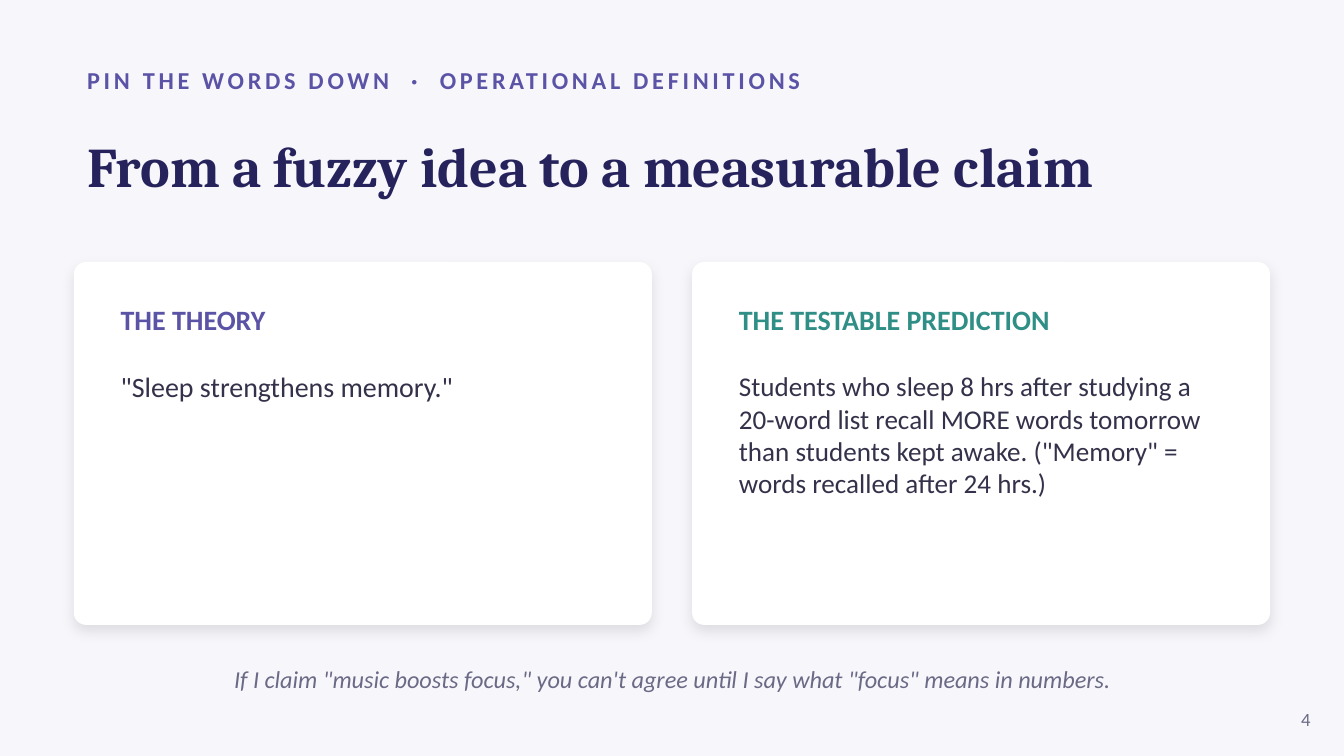
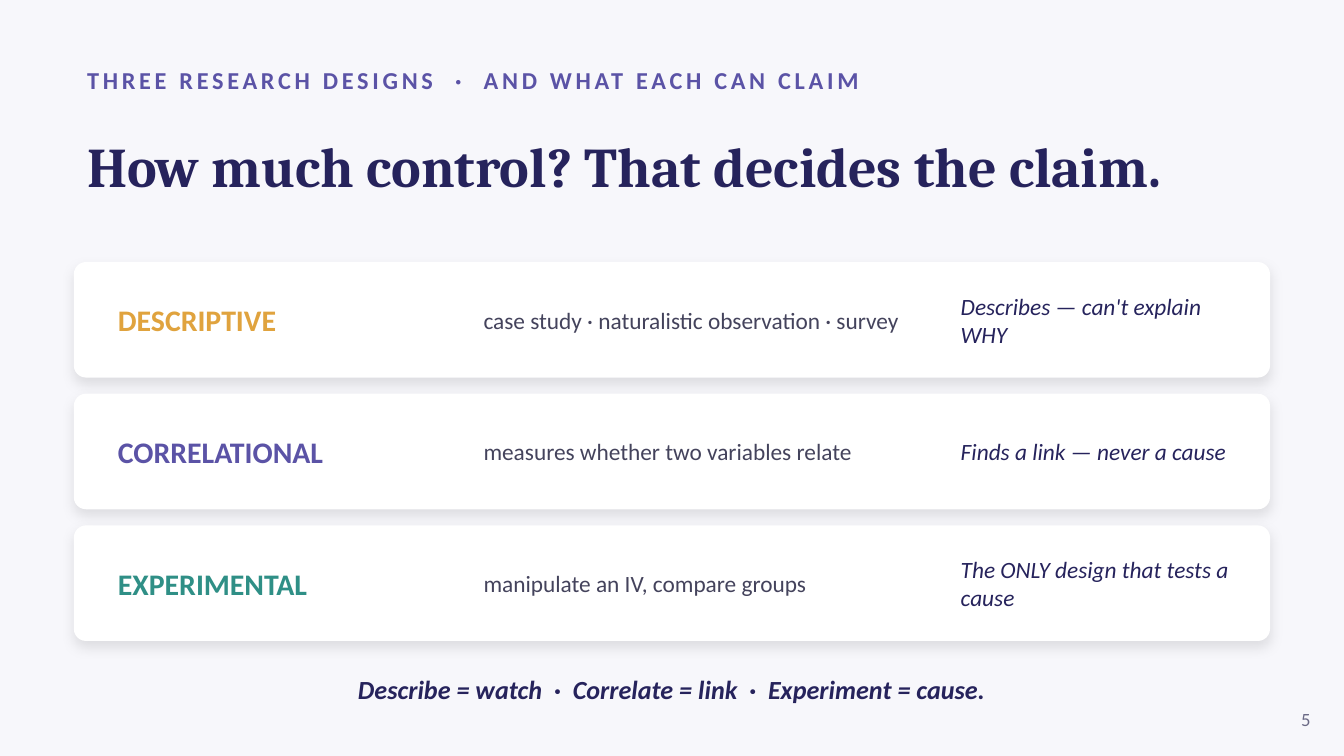
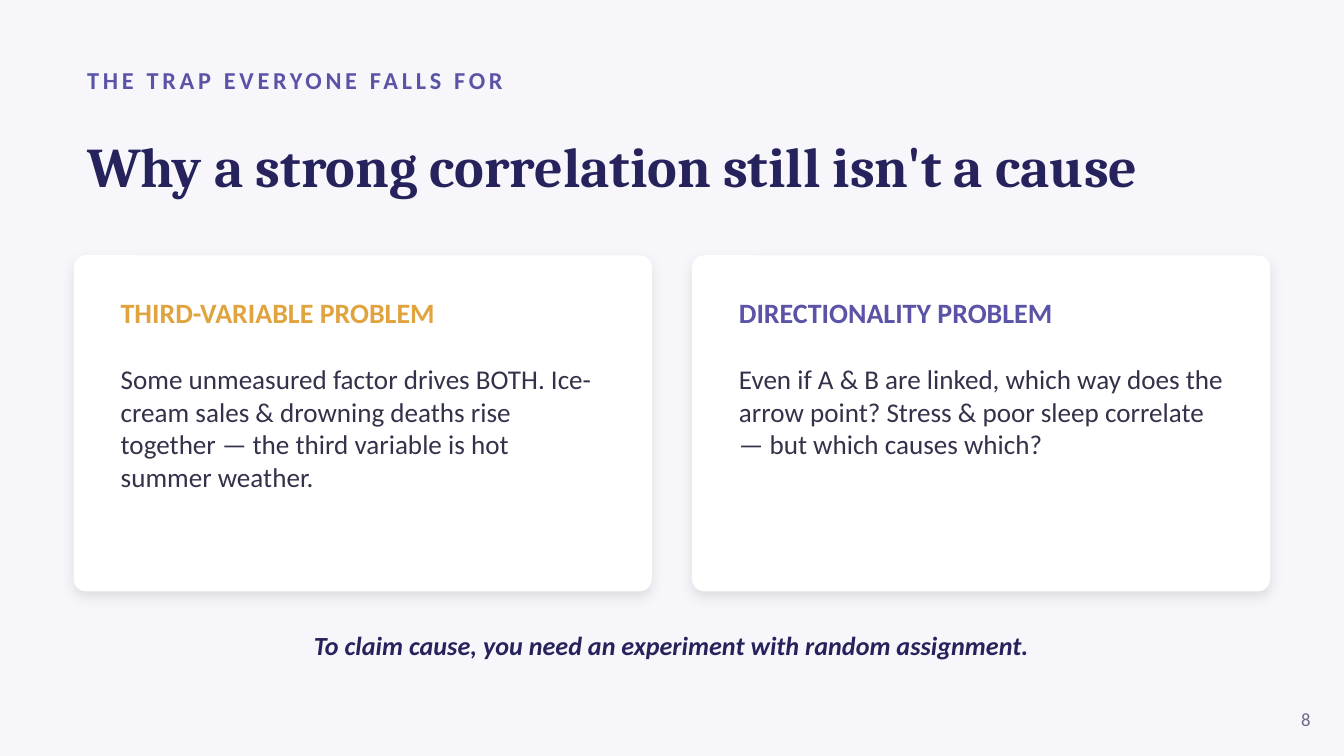
from lxml.etree import SubElement
from pptx import Presentation
from pptx.dml.color import RGBColor
from pptx.enum.shapes import MSO_SHAPE as Shape
from pptx.enum.text import MSO_ANCHOR as Anchor, PP_ALIGN as Align
from pptx.oxml.ns import qn
from pptx.util import Inches, Pt

# Content
PURPLE, TEAL, AMBER = "5B53A6", "2F8F86", "E0A33E"
NAVY, INK, SLATE, GREY = "26235C", "33324A", "44435C", "6B6A86"
PAPER, WHITE, BLACK = "F7F7FB", "FFFFFF", "000000"

DEFINITIONS = {
    "number": 4,
    "kicker": "PIN THE WORDS DOWN  ·  OPERATIONAL DEFINITIONS",
    "title": "From a fuzzy idea to a measurable claim",
    "top": 1.95,
    "height": 2.7,
    "cards": [
        ("THE THEORY", PURPLE, "\"Sleep strengthens memory.\"", 15),
        ("THE TESTABLE PREDICTION", TEAL,
         "Students who sleep 8 hrs after studying a 20-word list recall MORE "
         "words tomorrow than students kept awake. (\"Memory\" = words recalled "
         "after 24 hrs.)", 14.5),
    ],
    "takeaway": "If I claim \"music boosts focus,\" you can't agree until I say "
                "what \"focus\" means in numbers.",
    "takeaway_format": {"size": 13, "color": GREY, "italic": True},
}
DESIGNS = {
    "number": 5,
    "kicker": "THREE RESEARCH DESIGNS  ·  AND WHAT EACH CAN CLAIM",
    "title": "How much control? That decides the claim.",
    "rows": [
        ("DESCRIPTIVE", AMBER, "case study · naturalistic observation · survey",
         "Describes — can't explain WHY"),
        ("CORRELATIONAL", PURPLE, "measures whether two variables relate",
         "Finds a link — never a cause"),
        ("EXPERIMENTAL", TEAL, "manipulate an IV, compare groups",
         "The ONLY design that tests a cause"),
    ],
    "takeaway": "Describe = watch  ·  Correlate = link  ·  Experiment = cause.",
}
TRAP = {
    "number": 8,
    "kicker": "THE TRAP EVERYONE FALLS FOR",
    "title": "Why a strong correlation still isn't a cause",
    "top": 1.9,
    "height": 2.5,
    "cards": [
        ("THIRD-VARIABLE PROBLEM", AMBER,
         "Some unmeasured factor drives BOTH. Ice-cream sales & drowning deaths "
         "rise together — the third variable is hot summer weather.", 14.5),
        ("DIRECTIONALITY PROBLEM", PURPLE,
         "Even if A & B are linked, which way does the arrow point? Stress & poor "
         "sleep correlate — but which causes which?", 14.5),
    ],
    "takeaway": "To claim cause, you need an experiment with random assignment.",
    "takeaway_format": {"size": 14, "color": NAVY, "bold": True, "italic": True},
}

# Shared layout, in inches
PAGE_WIDTH = 10
PAGE_HEIGHT = PAGE_WIDTH * 9 / 16
MARGIN, CONTENT_WIDTH = 0.55, 8.9
CARD_GAP, CARD_PADDING, CORNER = 0.3, 0.25, 0.09
ROW_TOP, ROW_HEIGHT, ROW_GAP = 1.95, 0.86, 0.12


def rgb(value):
    return RGBColor.from_string(value)


def add_span(para, text, size, color, name="Calibri", spacing=0, **styles):
    span = para.add_run()
    span.text = text
    span.font.color.rgb = rgb(color)
    for key, value in {"size": Pt(size), "name": name, **styles}.items():
        setattr(span.font, key, value)
    if spacing:
        span._r.get_or_add_rPr().set("spc", str(spacing * 100))


def add_box(page, place, anchor=Anchor.MIDDLE):
    frame = page.shapes.add_textbox(*map(Inches, place)).text_frame
    frame.word_wrap = True
    frame.vertical_anchor = anchor
    return frame


def add_label(page, place, text, align=Align.LEFT, **look):
    para = add_box(page, place).paragraphs[0]
    para.alignment = align
    add_span(para, text, **look)


def add_panel(page, left, top, width, height):
    panel = page.shapes.add_shape(
        Shape.ROUNDED_RECTANGLE, *map(Inches, (left, top, width, height)))
    panel.adjustments[0] = CORNER / min(width, height)
    panel.fill.solid()
    panel.fill.fore_color.rgb = rgb(WHITE)
    panel.line.fill.background()
    # Soft shadow straight below the panel
    panel.shadow.inherit = False
    effects = panel._element.spPr.find(qn("a:effectLst"))
    shadow = SubElement(effects, qn("a:outerShdw"), blurRad=str(Pt(7)),
                        dist=str(Pt(3)), dir="5400000", algn="bl", rotWithShape="0")
    tint = SubElement(shadow, qn("a:srgbClr"), val=BLACK)
    SubElement(tint, qn("a:alpha"), val="10000")


def add_page(deck, content):
    page = deck.slides.add_slide(deck.slide_layouts[6])
    page.background.fill.solid()
    page.background.fill.fore_color.rgb = rgb(PAPER)
    add_label(page, (MARGIN, 0.42, 9, 0.35), content["kicker"],
              size=13, color=PURPLE, bold=True, spacing=2)
    add_label(page, (MARGIN, 0.78, CONTENT_WIDTH, 0.9), content["title"],
              size=30, color=NAVY, name="Cambria", bold=True)
    return page


def add_closing(page, content, top, height, **look):
    add_label(page, (MARGIN, top, CONTENT_WIDTH, height), content["takeaway"],
              Align.CENTER, **look)
    add_label(page, (9.35, 5.2, 0.5, 0.3), str(content["number"]),
              Align.RIGHT, size=10, color=GREY)


def add_cards_page(deck, content):
    page = add_page(deck, content)
    top, height, cards = content["top"], content["height"], content["cards"]
    width = (CONTENT_WIDTH - CARD_GAP * (len(cards) - 1)) / len(cards)
    lefts = [MARGIN + i * (width + CARD_GAP) for i in range(len(cards))]
    for left in lefts:
        add_panel(page, left, top, width, height)
    for left, (heading, color, body, size) in zip(lefts, cards):
        frame = add_box(page, (left + CARD_PADDING, top + CARD_PADDING,
                               width - 2 * CARD_PADDING, height - 0.4), Anchor.TOP)
        add_span(frame.paragraphs[0], heading, 15, color, bold=True)
        para = frame.add_paragraph()
        para.space_before = Pt(18)
        add_span(para, body, size, INK)
    add_closing(page, content, top + height + 0.2, 0.4, **content["takeaway_format"])


def add_designs_page(deck, content):
    page = add_page(deck, content)
    for i, (design, color, method, claim) in enumerate(content["rows"]):
        top = ROW_TOP + i * (ROW_HEIGHT + ROW_GAP)
        add_panel(page, MARGIN, top, CONTENT_WIDTH, ROW_HEIGHT)
        add_label(page, (0.78, top + 0.1, 2.7, 0.66), design,
                  size=16, color=color, bold=True)
        add_label(page, (3.5, top + 0.12, 3.5, 0.62), method, size=12.5, color=SLATE)
        add_label(page, (7.05, top + 0.12, 2.25, 0.62), claim,
                  size=12.5, color=NAVY, italic=True)
    add_closing(page, content, 4.95, 0.35, size=14, color=NAVY, bold=True, italic=True)


def main():
    deck = Presentation()
    deck.slide_width, deck.slide_height = Inches(PAGE_WIDTH), Inches(PAGE_HEIGHT)
    add_cards_page(deck, DEFINITIONS)
    add_designs_page(deck, DESIGNS)
    add_cards_page(deck, TRAP)
    deck.save("out.pptx")


if __name__ == "__main__":
    main()
